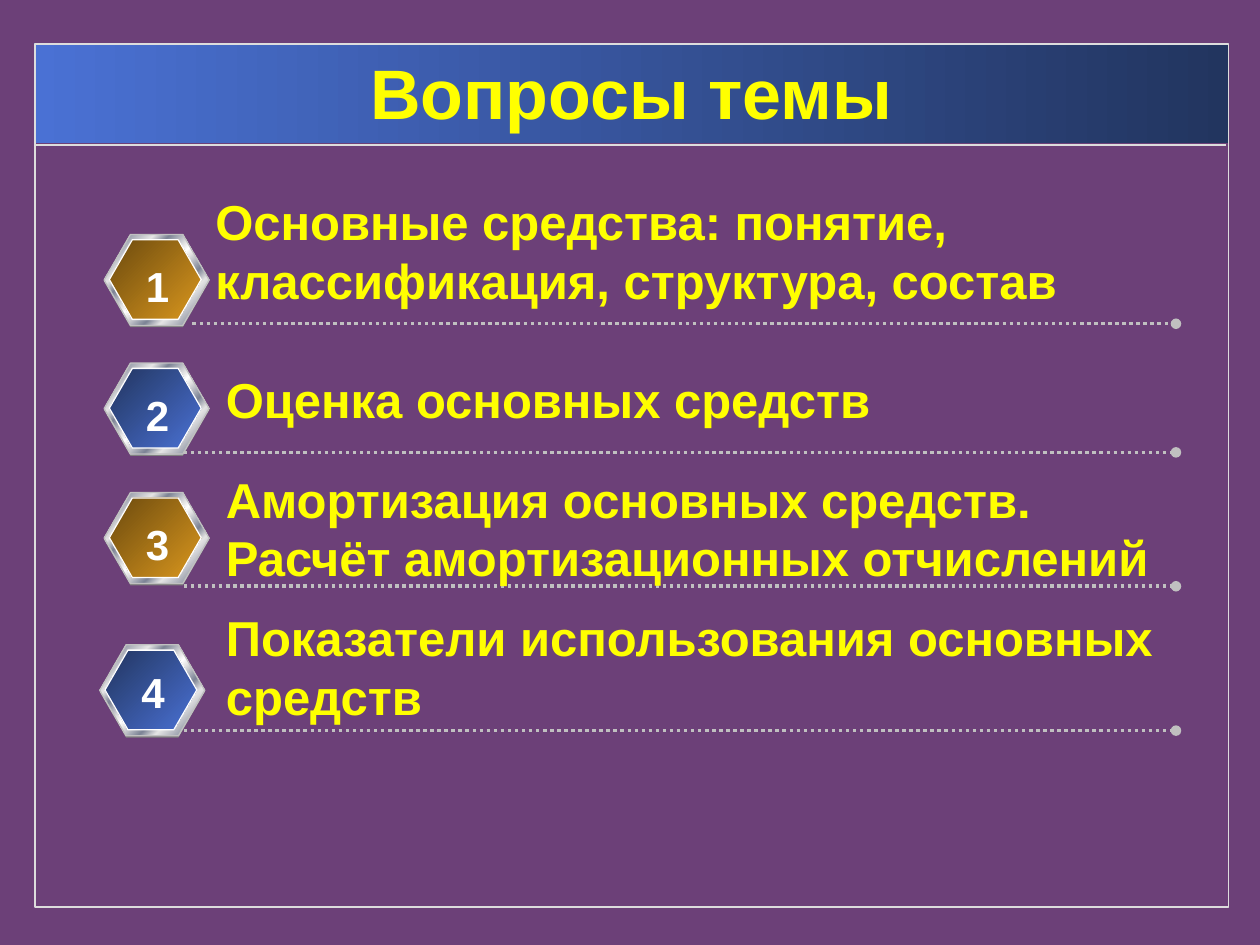
from lxml import etree
from pptx import Presentation
from pptx.dml.color import RGBColor
from pptx.enum.dml import MSO_LINE
from pptx.enum.shapes import MSO_CONNECTOR, MSO_SHAPE
from pptx.enum.text import MSO_ANCHOR, MSO_AUTO_SIZE, PP_ALIGN
from pptx.oxml import parse_xml
from pptx.oxml.ns import nsdecls, qn
from pptx.util import Pt

RECTANGLE, HEXAGON = MSO_SHAPE.RECTANGLE, MSO_SHAPE.HEXAGON
STRAIGHT = MSO_CONNECTOR.STRAIGHT
DOTTED = MSO_LINE.ROUND_DOT
TOP, MIDDLE = MSO_ANCHOR.TOP, MSO_ANCHOR.MIDDLE
LEFT, CENTER = PP_ALIGN.LEFT, PP_ALIGN.CENTER
GROW, FIXED = MSO_AUTO_SIZE.SHAPE_TO_FIT_TEXT, MSO_AUTO_SIZE.NONE

COLORS = {
    "background": "6C4078", "text": "FFFF00", "white": "FFFFFF",
    "frame": "DDDDDD", "rule": "C0C0C0", "shade": "808080",
    "blue": "4A71D4", "dark_blue": "22355F",
    "gold": "DA971E", "dark_gold": "6B4A0E",
    "silver": "E6E6E6", "steel": "7D8496",
}
HEADER_GRADIENT = [(0, "blue"), (100, "dark_blue")]
BADGE_GRADIENTS = [
    [(0, "dark_gold"), (100, "gold")],
    [(0, "dark_blue"), (100, "blue")],
]
METAL_GRADIENT = [
    (0, "silver"), (8, "steel"), (26, "silver"), (34, "steel"), (46, "silver"),
    (50, "white"), (54, "silver"), (66, "steel"), (74, "silver"),
    (92, "steel"), (100, "silver"),
]

TITLE = "Вопросы темы"
# text, text box, anchor, badge corner, number offset, rule start and height
QUESTIONS = [
    ("Основные средства: понятие, классификация, структура, состав",
     (116, 106, 587, 74), MIDDLE, (59.5, 134), 11.5, (110, 185)),
    ("Оценка основных средств",
     (122, 207.5, 567.5, 41), TOP, (59.5, 207.5), 11.5, (105, 258.5)),
    ("Амортизация основных средств. Расчёт амортизационных отчислений",
     (122, 264.5, 567.5, 74), TOP, (59.5, 281.5), 11, (105, 335)),
    ("Показатели использования основных средств",
     (122, 343.5, 597, 74), TOP, (57, 368.5), 9, (105, 417.5)),
]
RULE_END = 672


def rgb(name):
    return RGBColor.from_string(COLORS[name])


def fill_gradient(shape, stops, angle):
    """Fill with (percent, colour) stops; the angle runs clockwise."""
    stop_xml = "".join(
        f'<a:gs pos="{percent * 1000}"><a:srgbClr val="{COLORS[name]}"/></a:gs>'
        for percent, name in stops)
    gradient = parse_xml(
        f'<a:gradFill {nsdecls("a")} rotWithShape="1"><a:gsLst>{stop_xml}</a:gsLst>'
        f'<a:lin ang="{angle * 60000}" scaled="1"/></a:gradFill>')
    shape.fill.background()
    properties = shape.fill._xPr
    properties.replace(properties.find(qn("a:noFill")), gradient)


def add_shape(slide, kind, box, fill=None, gradient=None, angle=0, line=None, width=0.75):
    shape = slide.shapes.add_shape(kind, *map(Pt, box))
    shape.shadow.inherit = False
    if gradient:
        fill_gradient(shape, gradient, angle)
    elif fill:
        shape.fill.solid()
        shape.fill.fore_color.rgb = rgb(fill)
    else:
        shape.fill.background()
    if line:
        shape.line.color.rgb = rgb(line)
        shape.line.width = Pt(width)
    else:
        shape.line.fill.background()
    if kind == HEXAGON:
        shape.adjustments[0] = 0.289
        shape.adjustments[1] = 1.155
    return shape


def add_rule(slide, start, end, color, width, dotted=False):
    """Draw a line; a dotted one ends in a round dot."""
    connector = slide.shapes.add_connector(STRAIGHT, *map(Pt, start + end))
    connector.line.color.rgb = rgb(color)
    connector.line.width = Pt(width)
    if dotted:
        connector.line.dash_style = DOTTED
        etree.SubElement(connector.line._get_or_add_ln(), qn("a:tailEnd"), type="oval")
    etree.SubElement(connector._element.spPr, qn("a:effectLst"))


def add_text(slide, text, box, size, color="text", align=LEFT, anchor=TOP,
             wrap=True, auto_size=GROW):
    frame = slide.shapes.add_textbox(*map(Pt, box)).text_frame
    frame.word_wrap = wrap
    frame.auto_size = auto_size
    frame.vertical_anchor = anchor
    paragraph = frame.paragraphs[0]
    paragraph.alignment = align
    run = paragraph.add_run()
    run.text = text
    run.font.name = "Arial"
    run.font.size = Pt(size)
    run.font.bold = True
    run.font.color.rgb = rgb(color)


def add_badge(slide, left, top, gradient):
    add_shape(slide, HEXAGON, (left, top + 1, 60, 52), fill="shade")
    add_shape(slide, HEXAGON, (left, top, 60, 52),
              gradient=METAL_GRADIENT, angle=45, line="rule")
    add_shape(slide, HEXAGON, (left + 3, top + 3, 52.5, 45.5),
              gradient=gradient, angle=45, line="white")


def main():
    presentation = Presentation()
    presentation.slide_width, presentation.slide_height = Pt(720), Pt(540)
    slide = presentation.slides.add_slide(presentation.slide_layouts[6])
    slide.background.fill.solid()
    slide.background.fill.fore_color.rgb = rgb("background")

    add_shape(slide, RECTANGLE, (19.5, 24.5, 682.5, 57.5), gradient=HEADER_GRADIENT)
    add_shape(slide, RECTANGLE, (20, 25, 682, 493.5), line="frame", width=1)
    add_rule(slide, (19.5, 83), (700.5, 83), "frame", 1)
    add_text(slide, TITLE, (36, 30, 649.5, 45), 40, align=CENTER, anchor=MIDDLE,
             auto_size=FIXED)

    for index, question in enumerate(QUESTIONS):
        text, box, anchor, (left, top), number_offset, rule_start = question
        add_badge(slide, left, top, BADGE_GRADIENTS[index % 2])
        add_rule(slide, rule_start, (RULE_END, rule_start[1]), "rule", 2, dotted=True)
        add_text(slide, text, box, 28, anchor=anchor)
        add_text(slide, str(index + 1), (left + 16.5, top + number_offset, 28, 36), 24,
                 color="white", align=CENTER, wrap=False)

    presentation.save("out.pptx")


if __name__ == "__main__":
    main()
